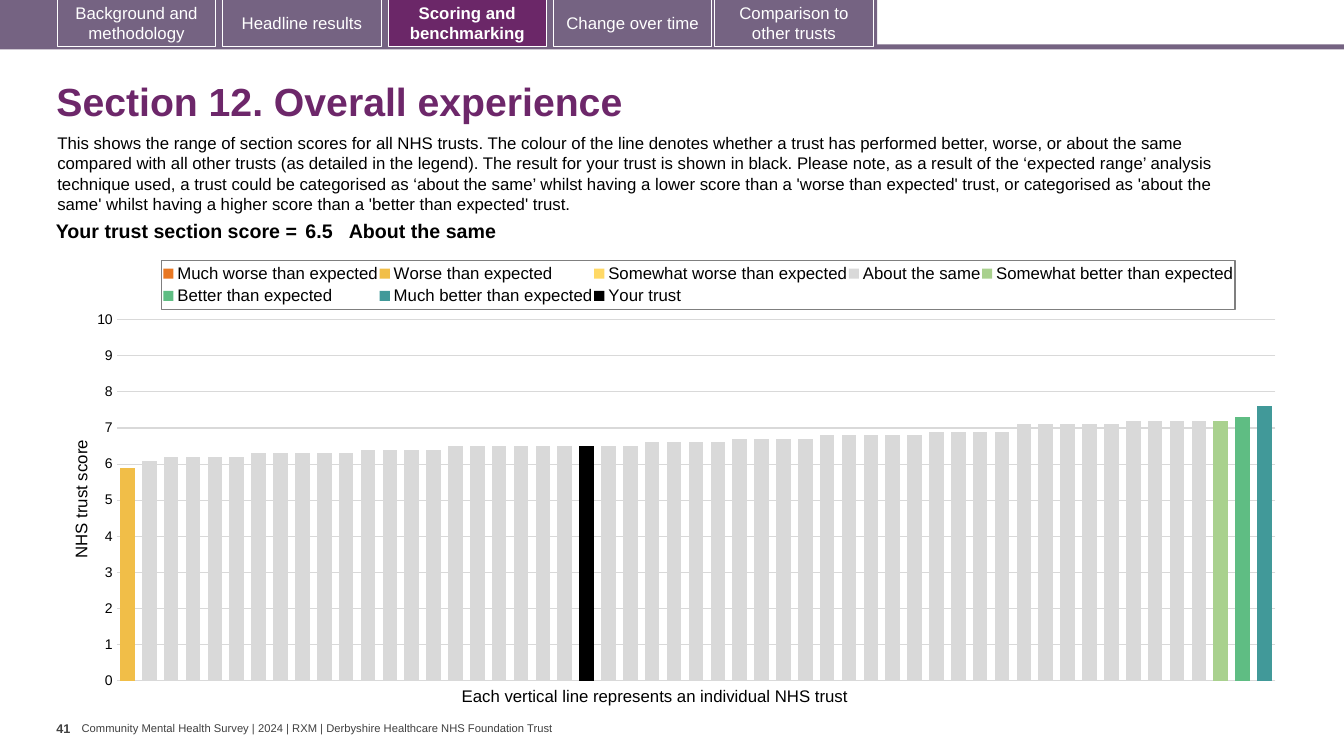
from copy import deepcopy
from dataclasses import dataclass

from pptx import Presentation
from pptx.chart.data import CategoryChartData
from pptx.dml.color import RGBColor
from pptx.enum.chart import XL_CHART_TYPE, XL_LEGEND_POSITION, XL_TICK_MARK
from pptx.enum.shapes import MSO_SHAPE
from pptx.enum.text import MSO_ANCHOR, PP_ALIGN
from pptx.oxml import parse_xml
from pptx.oxml.ns import nsdecls
from pptx.util import Inches, Pt


@dataclass(frozen=True)
class Theme:
    font: str = "Arial"
    bar: str = "756382"
    active: str = "6B2768"
    title: str = "6D276A"
    text: str = "000000"
    footer: str = "404040"
    white: str = "FFFFFF"
    grid: str = "D9D9D9"
    legend_border: str = "7F7F7F"
    title_size: int = 28
    score_size: int = 14
    body_size: int = 12
    axis_size: int = 10
    number_size: int = 9
    footer_size: int = 8


theme = Theme()


def style(font, size, color, bold=False):
    font.name, font.size, font.bold = theme.font, Pt(size), bold
    font.color.rgb = RGBColor.from_string(color)


def place(parent, previous_tag, x, y, w=None, h=None, inner=False):
    for automatic in parent.findall("{*}layout"):
        parent.remove(automatic)
    target = '<c:layoutTarget val="inner"/>' if inner else ""
    size = f'<c:w val="{w}"/><c:h val="{h}"/>' if w else ""
    layout = parse_xml(
        f'<c:layout {nsdecls("c")}><c:manualLayout>{target}'
        f'<c:xMode val="edge"/><c:yMode val="edge"/>'
        f'<c:x val="{x}"/><c:y val="{y}"/>{size}</c:manualLayout></c:layout>')
    if previous_tag:
        parent.find("{*}" + previous_tag).addnext(layout)
    else:
        parent.insert(0, layout)


prs = Presentation()
prs.slide_width, prs.slide_height = Inches(13.33), Inches(7.5)
slide = prs.slides.add_slide(prs.slide_layouts[5])
shapes = slide.shapes

# Navigation bar and tabs
tabs = [
    (0.57, "Background and methodology"),
    (2.21, "Headline results"),
    (3.85, "Scoring and benchmarking"),
    (5.49, "Change over time"),
    (7.09, "Comparison to other trusts"),
]
blocks = [(0, 0.44, 13.33, 0.05, None), (0, 0, 8.7, 0.47, None)]
blocks += [(left, -0.01, 1.57, 0.47, label) for left, label in tabs]
for left, top, width, height, label in blocks:
    active = label == "Scoring and benchmarking"
    block = shapes.add_shape(MSO_SHAPE.RECTANGLE, Inches(left), Inches(top),
                             Inches(width), Inches(height))
    block.shadow.inherit = False
    block.fill.solid()
    block.fill.fore_color.rgb = RGBColor.from_string(
        theme.active if active else theme.bar)
    if label is None:
        block.line.fill.background()
        continue
    block.line.color.rgb = RGBColor.from_string(theme.white)
    block.line.width = Pt(0.75)
    block.text_frame.vertical_anchor = MSO_ANCHOR.MIDDLE
    tab_text = block.text_frame.paragraphs[0]
    tab_text.text = label
    tab_text.alignment = PP_ALIGN.CENTER
    style(tab_text.font, theme.body_size, theme.white, active)

# Title
title = shapes.title
title.left, title.top = Inches(0.46), Inches(0.67)
title.width, title.height = Inches(12.49), Inches(0.72)
title.text_frame.text = "Section 12. Overall experience"
title.text_frame.vertical_anchor = MSO_ANCHOR.MIDDLE
heading = title.text_frame.paragraphs[0]
heading.alignment = PP_ALIGN.LEFT
heading.line_spacing = 0.9
style(heading.font, theme.title_size, theme.title, True)

# Trust scores, lowest to highest: name, colour, position of first trust, scores
about_the_same = (
    [6.1] + [6.2] * 4 + [6.3] * 5 + [6.4] * 4 + [6.5] * 9 + [6.6] * 4
    + [6.7] * 4 + [6.8] * 5 + [6.9] * 4 + [7.1] * 5 + [7.2] * 4)
bands = [
    ("Much worse than expected", "E87722", 0, []),
    ("Worse than expected", "F1BE48", 0, [5.9]),
    ("Somewhat worse than expected", "FFD966", 0, []),
    ("About the same", "D9D9D9", 1, about_the_same),
    ("Somewhat better than expected", "A9D18E", 50, [7.2]),
    ("Better than expected", "5FBD83", 51, [7.3]),
    ("Much better than expected", "419999", 52, [7.6]),
    ("Your trust", "000000", 21, [6.5]),
]
trust_count = 53
scores = CategoryChartData(number_format="0.0")
scores.categories = [str(n + 1) for n in range(trust_count)]
for name, _, start, values in bands:
    after = trust_count - start - len(values)
    scores.add_series(name, [None] * start + values + [None] * after)

# Chart
chart = shapes.add_chart(
    XL_CHART_TYPE.COLUMN_CLUSTERED, Inches(0.67), Inches(2.47),
    Inches(12.15), Inches(4.44), scores).chart
chart.has_title = False
style(chart.font, theme.axis_size, theme.text)
plot = chart.plots[0]
plot.gap_width, plot.overlap = 50, 100
plot.vary_by_categories = False
for series, (_, color, _, _) in zip(plot.series, bands):
    series.format.fill.solid()
    series.format.fill.fore_color.rgb = RGBColor.from_string(color)
plot_area = chart._chartSpace.chart.plotArea
place(plot_area, None, 0.04, 0.158, 0.946, 0.807, inner=True)

# Axes
chart.category_axis.visible = False
score_axis = chart.value_axis
score_axis.minimum_scale, score_axis.maximum_scale = 0, 10
score_axis.major_unit = 1
score_axis.major_tick_mark = XL_TICK_MARK.NONE
score_axis.format.line.fill.background()
score_axis.tick_labels.number_format = "0"
score_axis.tick_labels.number_format_is_linked = False
style(score_axis.tick_labels.font, theme.axis_size, theme.text)
gridline = score_axis.major_gridlines.format.line
gridline.color.rgb = RGBColor.from_string(theme.grid)
gridline.width = Pt(0.75)
axis_title = score_axis.axis_title
axis_title.text_frame.text = "NHS trust score"
style(axis_title.text_frame.paragraphs[0].font, theme.body_size, theme.text)
place(axis_title._element, "tx", 0, 0.42)

# Your trust is drawn over the other columns on a hidden right axis
bars, cat_axis, val_axis = (plot_area.find("{*}" + tag) for tag in ("barChart", "catAx", "valAx"))
your_bars, your_cats, right_axis = (deepcopy(part) for part in (bars, cat_axis, val_axis))
bars.remove(bars.findall("{*}ser")[-1])
for other in your_bars.findall("{*}ser")[:-1]:
    your_bars.remove(other)
for axis_id, number in zip(your_bars.findall("{*}axId"), ("5001", "5002")):
    axis_id.set("val", number)
for axis, number, crossing in ((your_cats, "5001", "5002"), (right_axis, "5002", "5001")):
    axis.find("{*}axId").set("val", number)
    axis.find("{*}crossAx").set("val", crossing)
for tag in ("majorGridlines", "title"):
    right_axis.remove(right_axis.find("{*}" + tag))
for tag, value in (("axPos", "r"), ("tickLblPos", "none"), ("crosses", "max")):
    right_axis.find("{*}" + tag).set("val", value)
bars.addnext(your_bars)
val_axis.addnext(right_axis)
right_axis.addnext(your_cats)

# Legend
chart.has_legend = True
legend = chart.legend
legend.position = XL_LEGEND_POSITION.TOP
legend.include_in_layout = False
style(legend.font, theme.body_size, theme.text)
place(legend._element, "legendPos", 0.077, 0.025, 0.876, 0.11)
legend._element.find("{*}txPr").addprevious(parse_xml(
    f'<c:spPr {nsdecls("c", "a")}><a:ln w="9525"><a:solidFill>'
    f'<a:srgbClr val="{theme.legend_border}"/></a:solidFill></a:ln></c:spPr>'))

# Section score
score_table = shapes.add_table(1, 3, Inches(0.35), Inches(2.15), Inches(11.7), Inches(0.31)).table
score_table.first_row = score_table.horz_banding = False
score_cells = [
    ("Your trust section score =", 2.64, 0.04, PP_ALIGN.RIGHT),
    ("6.5", 0.47, 0.04, PP_ALIGN.LEFT),
    ("About the same", 8.59, 0, PP_ALIGN.LEFT),
]
for column, (text, width, margin, alignment) in enumerate(score_cells):
    score_table.columns[column].width = Inches(width)
    cell = score_table.cell(0, column)
    cell.fill.background()
    cell.margin_left = cell.margin_right = Inches(margin)
    cell.margin_top = cell.margin_bottom = Inches(0.04)
    cell.text = text
    cell.text_frame.paragraphs[0].alignment = alignment
    style(cell.text_frame.paragraphs[0].font, theme.score_size, theme.text, True)

# Introduction, chart caption, page number and footer
intro = (
    "This shows the range of section scores for all NHS trusts. The colour of the line denotes whether a trust has "
    "performed better, worse, or about the same compared with all other trusts (as detailed in the legend). The result "
    "for your trust is shown in black. Please note, as a result of the ‘expected range’ analysis technique used, a trust "
    "could be categorised as ‘about the same’ whilst having a lower score than a 'worse than expected' trust, or "
    "categorised as 'about the same' whilst having a higher score than a 'better than expected' trust.")
caption = "Each vertical line represents an individual NHS trust"
footer = "Community Mental Health Survey | 2024 | RXM | Derbyshire Healthcare NHS Foundation Trust"
notes = [
    (intro, 0.47, 1.27, 12.13, 0.91, 0.1, 0.05, theme.body_size, theme.text, False),
    (caption, 4.48, 6.75, 4.11, 0.3, 0.1, 0.05, theme.body_size, theme.text, False),
    ("41", 0.56, 7.1, 0.25, 0.4, 0, 0.05, theme.number_size, theme.footer, True),
    (footer, 0.81, 7.16, 4.73, 0.13, 0, 0, theme.footer_size, theme.footer, False),
]
for text, left, top, width, height, side, edge, size, color, bold in notes:
    frame = shapes.add_textbox(Inches(left), Inches(top), Inches(width), Inches(height)).text_frame
    frame.word_wrap = text == intro
    frame.margin_left = frame.margin_right = Inches(side)
    frame.margin_top = frame.margin_bottom = Inches(edge)
    frame.text = text
    style(frame.paragraphs[0].font, size, color, bold)

prs.save("out.pptx")
